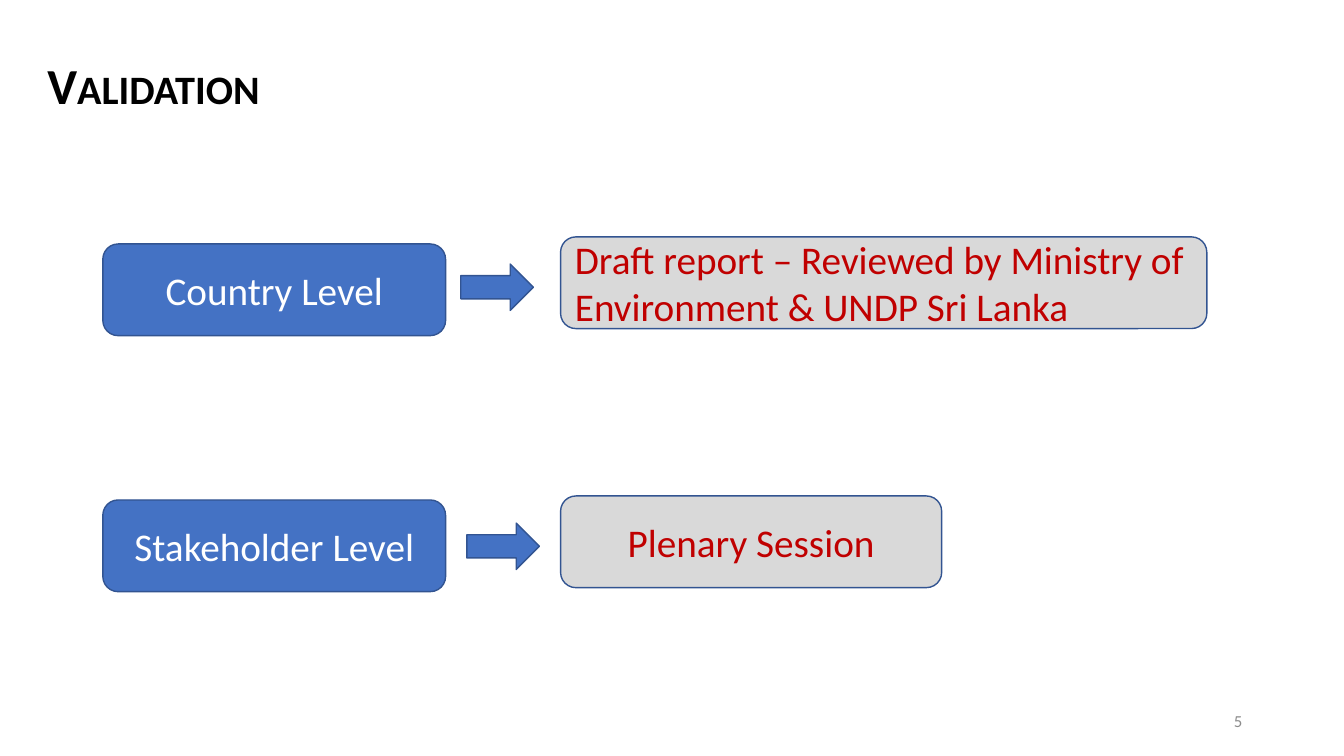
"""Build the Validation slide with two levels and their review steps."""
import pptx
import pptx.dml.color
import pptx.enum.shapes
import pptx.enum.text
import pptx.util

Inches = pptx.util.Inches
Kind = pptx.enum.shapes.MSO_SHAPE
Align = pptx.enum.text.PP_ALIGN
Anchor = pptx.enum.text.MSO_ANCHOR
BLUE, GREY, EDGE = "4472C4", "D9D9D9", "325491"
RED, WHITE, BLACK, PALE = "C00000", "FFFFFF", "000000", "8C8C8C"


def tint(color, code):
    color.rgb = pptx.dml.color.RGBColor.from_string(code)


class Deck:
    face = "Calibri"

    def __init__(self):
        self.file = pptx.Presentation()
        self.file.slide_width = Inches(13.33)
        self.file.slide_height = Inches(7.5)
        self.slide = self.file.slides.add_slide(self.file.slide_layouts[5])

    def words(self, shape, text, size, color, align=Align.CENTER,
              anchor=Anchor.MIDDLE, bold=False):
        frame = shape.text_frame
        look = {"word_wrap": True, "vertical_anchor": anchor,
                "auto_size": pptx.enum.text.MSO_AUTO_SIZE.NONE}
        for name, value in look.items():
            setattr(frame, name, value)
        line = frame.paragraphs[0]
        line.alignment = align
        run = line.add_run()
        run.text = text
        style = {"name": self.face, "size": pptx.util.Pt(size), "bold": bold}
        for name, value in style.items():
            setattr(run.font, name, value)
        tint(run.font.color, color)

    def title(self, text, left, top, width, height):
        shape = self.slide.shapes.title
        place = {"left": left, "top": top, "width": width, "height": height}
        for name, value in place.items():
            setattr(shape, name, Inches(value))
        self.words(shape, text, 36, BLACK, Align.LEFT, Anchor.TOP, True)
        shape.text_frame.margin_left = Inches(0.12)
        for props in shape.element.xpath(".//a:rPr"):
            props.set("cap", "small")

    def label(self, text, *area):
        shape = self.slide.shapes.add_textbox(*map(Inches, area))
        self.words(shape, text, 12, PALE, Align.RIGHT)

    def shape(self, kind, fill, *area):
        shape = self.slide.shapes.add_shape(kind, *map(Inches, area))
        shape.shadow.inherit = False
        shape.fill.solid()
        tint(shape.fill.fore_color, fill)
        tint(shape.line.color, EDGE)
        shape.line.width = pptx.util.Pt(1)
        return shape

    def box(self, text, fill, color, left, top, width, align=Align.CENTER):
        shape = self.shape(Kind.ROUNDED_RECTANGLE, fill, left, top, width, 0.91)
        self.words(shape, text, 28, color, align)

    def arrow(self, left, top):
        self.shape(Kind.RIGHT_ARROW, BLUE, left, top, 0.72, 0.46)


def main():
    deck = Deck()
    deck.title("Validation", 0.35, 0.49, 11.85, 0.71)
    rows = [
        ("Country Level", 2.42, (4.57, 2.62),
         "Draft report – Reviewed by Ministry of Environment & UNDP Sri Lanka",
         2.35, 6.41, Align.LEFT),
        ("Stakeholder Level", 4.96, (4.63, 5.19),
         "Plenary Session", 4.92, 3.78, Align.CENTER),
    ]
    for level, top, arrow, step, high, width, align in rows:
        deck.box(level, BLUE, WHITE, 1.02, top, 3.4)
        deck.arrow(*arrow)
        deck.box(step, GREY, RED, 5.56, high, width, align)
    deck.label("5", 9.42, 6.95, 3, 0.4)
    deck.file.save("out.pptx")


if __name__ == "__main__":
    main()
